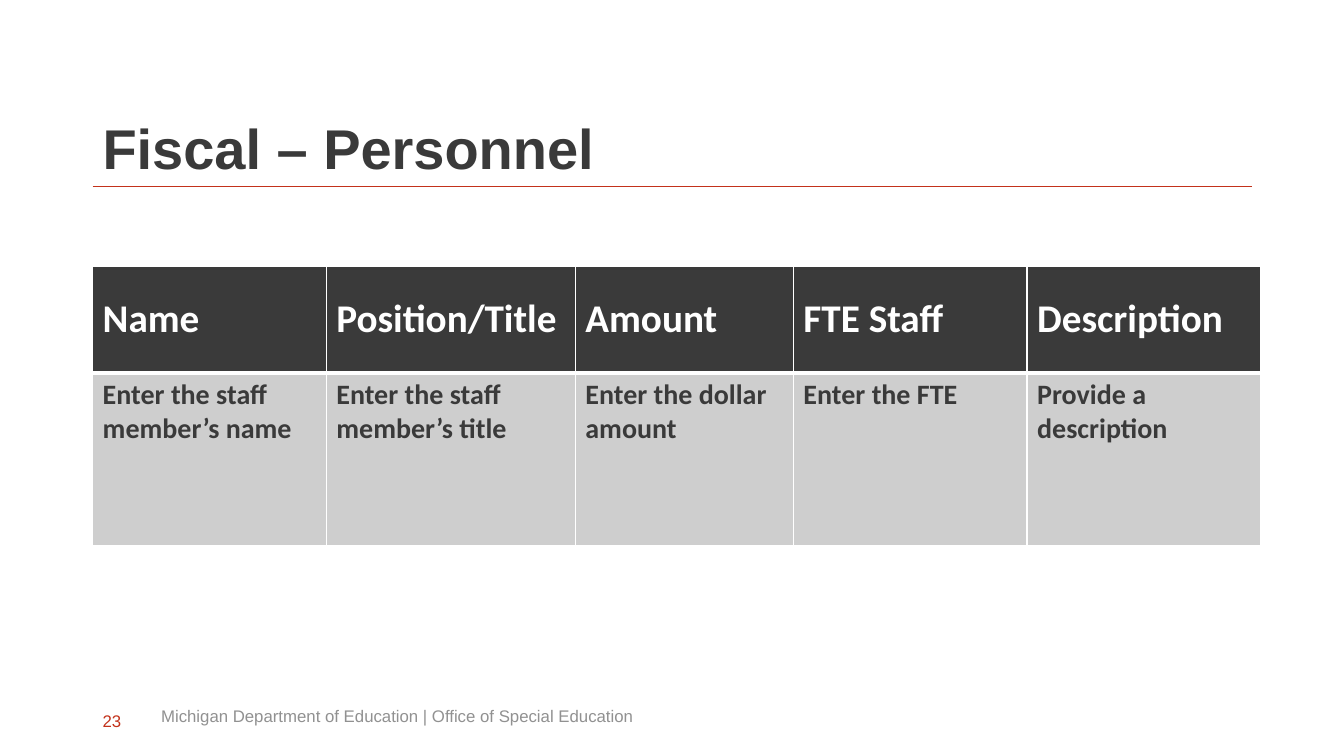
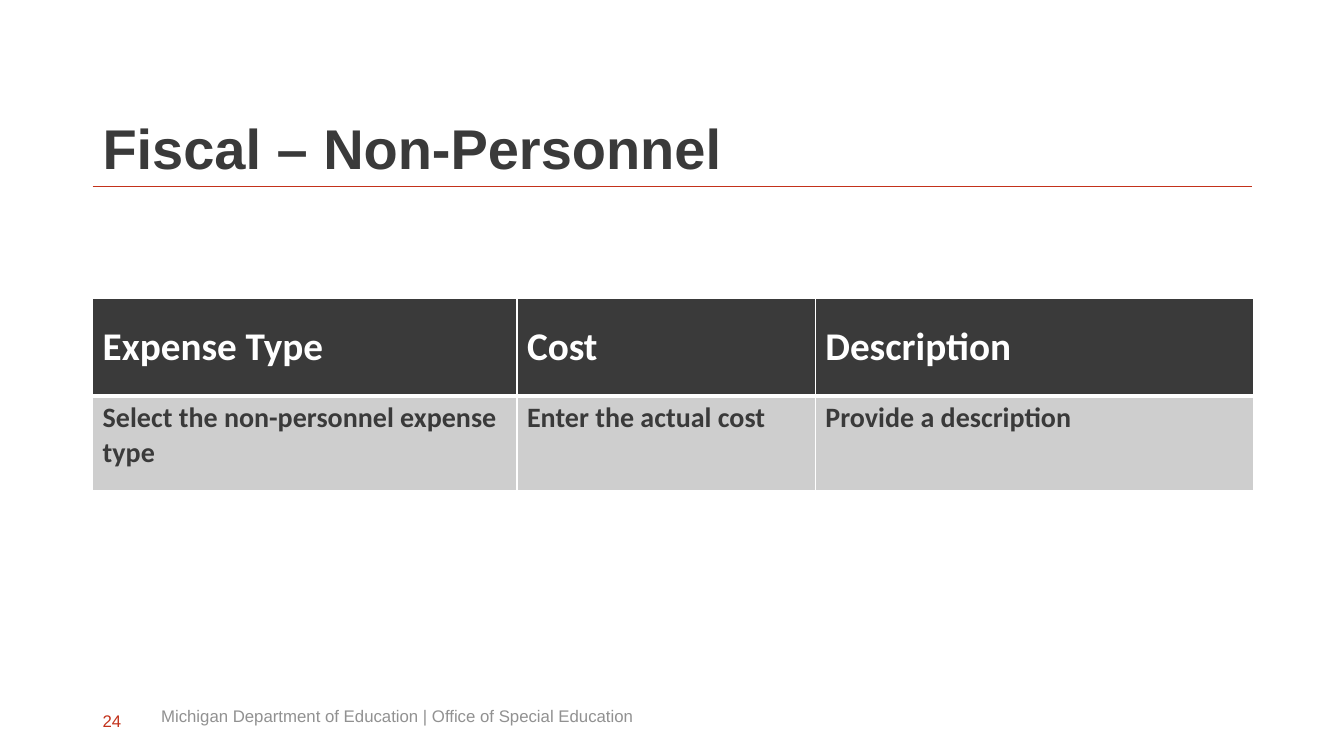
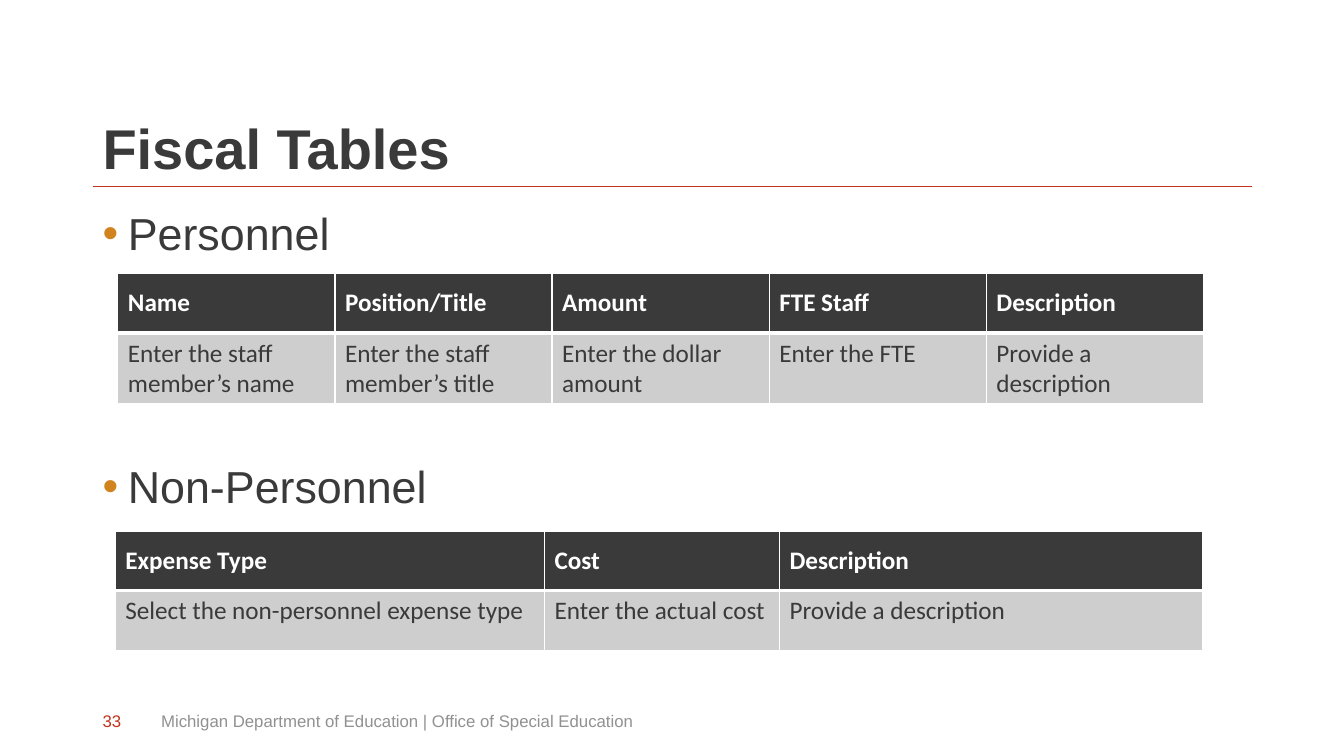
from dataclasses import dataclass

from lxml.etree import SubElement
from pptx import Presentation
from pptx.dml.color import RGBColor
from pptx.enum.shapes import MSO_CONNECTOR as Connector
from pptx.enum.text import MSO_ANCHOR as Anchor
from pptx.oxml.ns import qn
from pptx.slide import Slide
from pptx.table import _Cell as Cell
from pptx.text.text import TextFrame
from pptx.util import Pt

CHARCOAL = RGBColor(0x3A, 0x3A, 0x3A)
SILVER = RGBColor(0xCE, 0xCE, 0xCE)
GRAY = RGBColor(0x91, 0x91, 0x91)
RED = RGBColor(0xC3, 0x32, 0x1B)
ORANGE = RGBColor(0xD1, 0x83, 0x1E)
WHITE = RGBColor(0xFF, 0xFF, 0xFF)

LEFT = 66.2
RULE_TOP = 133.2
RULE_RIGHT = 894.2
FOOTER = "Michigan Department of Education | Office of Special Education"

PERSONNEL = [
    ("Name", "Enter the staff member’s name"),
    ("Position/Title", "Enter the staff member’s title"),
    ("Amount", "Enter the dollar amount"),
    ("FTE Staff", "Enter the FTE"),
    ("Description", "Provide a description"),
]
NON_PERSONNEL = [
    ("Expense Type", "Select the non-personnel expense type"),
    ("Cost", "Enter the actual cost"),
    ("Description", "Provide a description"),
]


@dataclass(frozen=True)
class FiscalTable:
    fields: list[tuple[str, str]]
    left: float
    top: float
    widths: list[float]
    heights: list[float]
    header_size: float
    body_size: float
    body_bold: bool


@dataclass(frozen=True)
class Heading:
    text: str
    top: float


@dataclass(frozen=True)
class Page:
    title: str
    number: int
    footer_top: float
    tables: list[FiscalTable]
    headings: tuple[Heading, ...] = ()


PAGES = [
    Page("Fiscal – Personnel", 23, 496.8, [
        FiscalTable(PERSONNEL, LEFT, 190.1, [166.9, 177.9, 155.8, 166.9, 166.9],
                    [76.3, 123.1], 28, 20, True),
    ]),
    Page("Fiscal – Non-Personnel", 24, 496.8, [
        FiscalTable(NON_PERSONNEL, LEFT, 213.1, [303.1, 213.1, 313.2],
                    [69.8, 67.7], 28, 20, True),
    ]),
    Page("Fiscal Tables", 33, 500.4, [
        FiscalTable(PERSONNEL, 84.2, 195.4, [155.1] * 5, [42.5, 50.4], 18, 18, False),
        FiscalTable(NON_PERSONNEL, 82.3, 379.4, [306.7, 167.8, 302.4],
                    [42.5, 42.5], 18, 18, False),
    ], (Heading("Personnel", 140.4), Heading("Non-Personnel", 321.1))),
]


def write(frame: TextFrame, text: str, *, size: float, color: RGBColor,
          font: str = "Arial", bold: bool = False, spacing: float | None = None,
          bullet: RGBColor | None = None) -> None:
    para = frame.paragraphs[0]
    if spacing:
        para.line_spacing = spacing
    if bullet is not None:
        props = para._p.get_or_add_pPr()
        props.set("marL", str(Pt(18)))
        props.set("indent", str(Pt(-18)))
        tint = SubElement(props, qn("a:buClr"))
        SubElement(tint, qn("a:srgbClr"), val=str(bullet))
        SubElement(props, qn("a:buFont"), typeface="Arial")
        SubElement(props, qn("a:buChar"), char="•")
    span = para.add_run()
    span.text = text
    span.font.name = font
    span.font.size = Pt(size)
    span.font.bold = bold
    span.font.color.rgb = color


def add_frame(slide: Slide, left: float, top: float, width: float, height: float,
              anchor: Anchor, inset: float = 3.6) -> TextFrame:
    box = slide.shapes.add_textbox(Pt(left), Pt(top), Pt(width), Pt(height))
    frame = box.text_frame
    frame.word_wrap = True
    frame.vertical_anchor = anchor
    frame.margin_top = Pt(inset)
    return frame


def set_borders(cell: Cell, **widths: float) -> None:
    props = cell._tc.get_or_add_tcPr()
    for side in "LRTB":
        line = SubElement(props, qn(f"a:ln{side}"), w=str(Pt(widths.get(side, 1))))
        fill = SubElement(line, qn("a:solidFill"))
        SubElement(fill, qn("a:srgbClr"), val=str(WHITE))


def style_cell(cell: Cell, text: str, fill: RGBColor, anchor: Anchor, *,
               size: float, color: RGBColor, bold: bool) -> None:
    cell.fill.solid()
    cell.fill.fore_color.rgb = fill
    cell.vertical_anchor = anchor
    write(cell.text_frame, text, size=size, color=color, font="Calibri", bold=bold)


def add_fiscal_table(slide: Slide, item: FiscalTable) -> None:
    table = slide.shapes.add_table(
        len(item.heights), len(item.widths), Pt(item.left), Pt(item.top),
        Pt(sum(item.widths)), Pt(sum(item.heights))).table
    table.horz_banding = False
    for row, height in zip(table.rows, item.heights):
        row.height = Pt(height)
    for index, (width, (header, prompt)) in enumerate(zip(item.widths, item.fields)):
        table.columns[index].width = Pt(width)
        head, body = table.cell(0, index), table.cell(1, index)
        set_borders(head, B=3)
        set_borders(body, T=3)
        style_cell(head, header, CHARCOAL, Anchor.MIDDLE,
                   size=item.header_size, color=WHITE, bold=True)
        style_cell(body, prompt, SILVER, Anchor.TOP,
                   size=item.body_size, color=CHARCOAL, bold=item.body_bold)


def add_rule(slide: Slide) -> None:
    rule = slide.shapes.add_connector(
        Connector.STRAIGHT, Pt(LEFT), Pt(RULE_TOP), Pt(RULE_RIGHT), Pt(RULE_TOP))
    rule.line.color.rgb = RED
    rule.line.width = Pt(0.5)
    SubElement(rule._element.spPr, qn("a:effectLst"))


def add_page(deck: Presentation, page: Page) -> None:
    slide = deck.slides.add_slide(deck.slide_layouts[6])
    add_rule(slide)
    write(add_frame(slide, LEFT, 28.8, 864, 104.4, Anchor.BOTTOM), page.title,
          size=40, color=CHARCOAL, bold=True, spacing=0.9)
    for heading in page.headings:
        write(add_frame(slide, LEFT, heading.top, 829.4, 54.7, Anchor.TOP, 6.6),
              heading.text, size=32, color=CHARCOAL, bullet=ORANGE)
    for item in page.tables:
        add_fiscal_table(slide, item)
    write(add_frame(slide, 108, page.footer_top, 604, 28.8, Anchor.MIDDLE),
          FOOTER, size=12, color=GRAY)
    write(add_frame(slide, LEFT, 500.4, 32.4, 28.8, Anchor.MIDDLE),
          str(page.number), size=12, color=RED)


def main() -> None:
    deck = Presentation()
    deck.slide_width = Pt(960)
    deck.slide_height = Pt(540)
    for page in PAGES:
        add_page(deck, page)
    deck.save("out.pptx")


if __name__ == "__main__":
    main()
